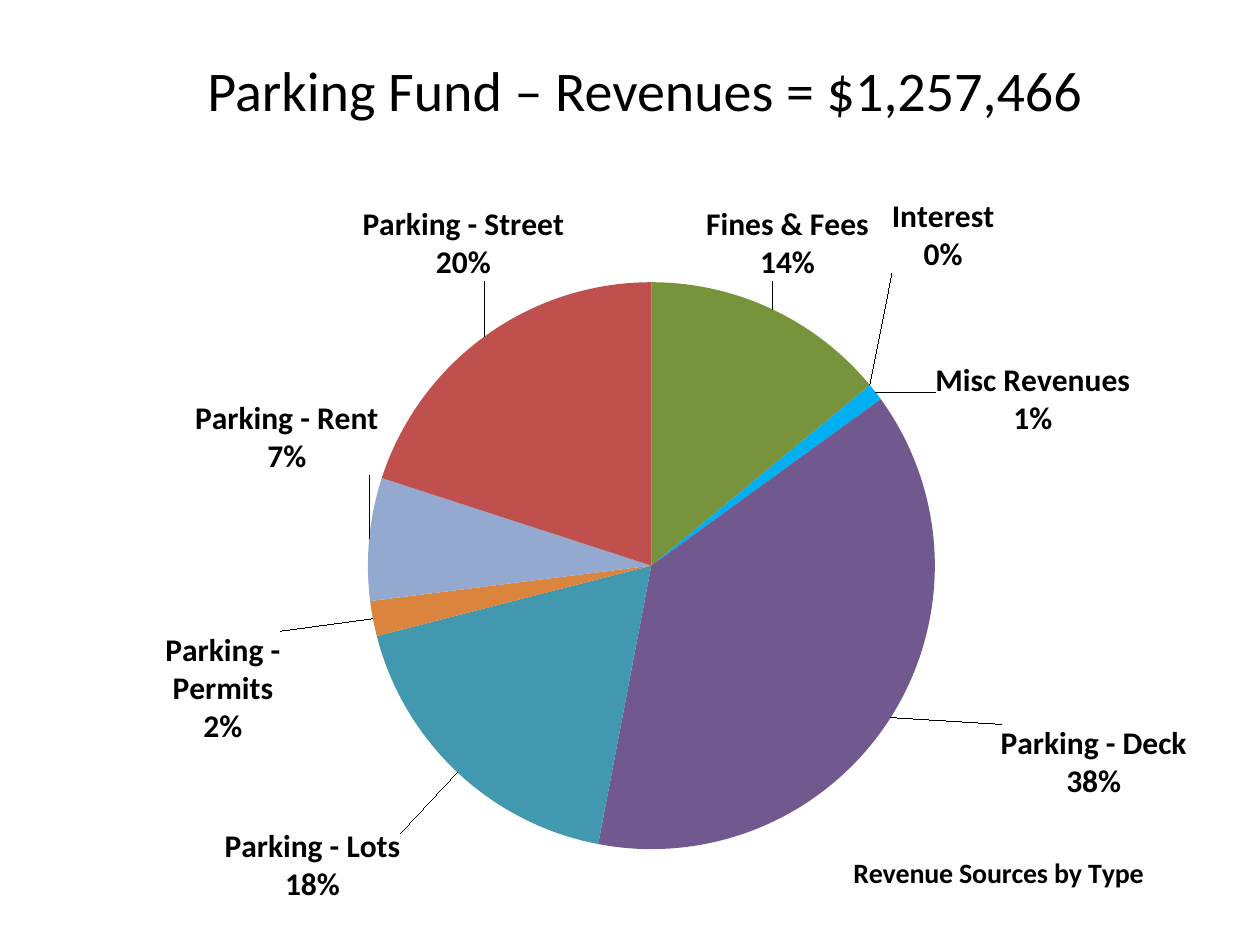
"""Build the parking fund revenue slide with its labelled pie chart."""
from dataclasses import dataclass
from math import cos, pi, sin

from pptx import Presentation
from pptx import util as u
from pptx.chart import data as chart_data
from pptx.dml.color import RGBColor
from pptx.enum import chart as charts, text
from pptx.oxml import parse_xml
from pptx.oxml.ns import nsdecls

SLIDE_WIDTH, SLIDE_HEIGHT = u.Inches(10), u.Inches(7.5)
CHART_WIDTH, CHART_HEIGHT = 8.67, 6.17
CENTRE_X, CENTRE_Y = 4.42 / CHART_WIDTH, 3.49 / CHART_HEIGHT
RADIUS, LABEL_GAP = 2.25, 0.06
FONT, INK = "Calibri", "000000"


@dataclass(frozen=True)
class Slice:
    """A revenue source and the label corner nearest the pie, as chart shares."""
    name: str
    percent: float
    color: str
    label_x: float
    label_y: float


SLICES = [
    Slice("Fines & Fees", 14, "77933C", 0.56, 0.2),
    Slice("Interest", 0.01, "E46C0A", 0.73, 0.19),
    Slice("Misc Revenues", 1, "00B0F0", 0.77, 0.4),
    Slice("Parking - Deck", 38, "71588F", 0.83, 0.77),
    Slice("Parking - Lots", 18, "4198AF", 0.28, 0.91),
    Slice("Parking - Permits", 2, "DB843D", 0.17, 0.65),
    Slice("Parking - Rent", 7, "93A9CF", 0.26, 0.45),
    Slice("Parking - Street", 20, "C0504D", 0.43, 0.2),
]
TOTAL = sum(part.percent for part in SLICES)


def rgb(color: str) -> RGBColor:
    """Turn a hex string into a colour."""
    return RGBColor.from_string(color)


def style_font(font, size: float, bold: bool = False, color: str = INK) -> None:
    """Set the typeface, size, weight and colour of a font."""
    font.name, font.size, font.bold = FONT, u.Pt(size), bold
    font.color.rgb = rgb(color)


def write(frame, words: str, align=text.PP_ALIGN.CENTER, **style) -> None:
    """Write one formatted paragraph into a text frame."""
    para = frame.paragraphs[0]
    para.alignment = align
    span = para.add_run()
    span.text = words
    style_font(span.font, **style)


def layout_xml(x: float, y: float, size: tuple = (), edges: bool = True) -> str:
    """Describe a manual chart layout in shares of the chart."""
    parts = ['<c:layoutTarget val="inner"/>'] if size else []
    if edges:
        parts += ['<c:xMode val="edge"/>', '<c:yMode val="edge"/>']
    parts += [f'<c:{tag} val="{value:.4f}"/>' for tag, value in zip("xywh", (x, y, *size))]
    return f'<c:layout {nsdecls("c")}><c:manualLayout>{"".join(parts)}</c:manualLayout></c:layout>'


def drop_layout(parent) -> None:
    """Remove the automatic layout of a chart part."""
    for layout in parent.xpath("./c:layout"):
        parent.remove(layout)


def label_offset(part: Slice, middle: float) -> tuple[float, float]:
    """Measure how far a label sits from its default place beside the pie."""
    angle, reach = 2 * pi * middle / TOTAL, RADIUS + LABEL_GAP
    default_x = CENTRE_X + reach * sin(angle) / CHART_WIDTH
    default_y = CENTRE_Y - reach * cos(angle) / CHART_HEIGHT
    return part.label_x - default_x, part.label_y - default_y


def labels_xml() -> str:
    """Describe all slice labels with their places and leader lines."""
    flags = {"LegendKey": 0, "Val": 0, "CatName": 1, "SerName": 0, "Percent": 1, "BubbleSize": 0}
    content = ('<c:dLblPos val="bestFit"/>'
               + "".join(f'<c:show{name} val="{on}"/>' for name, on in flags.items())
               + "<c:separator>\n</c:separator>")
    labels, start = [], 0
    for index, part in enumerate(SLICES):
        offset = label_offset(part, start + part.percent / 2)
        labels.append(f'<c:dLbl><c:idx val="{index}"/>{layout_xml(*offset, edges=False)}{content}</c:dLbl>')
        start += part.percent
    return (f'<c:dLbls {nsdecls("c")}>{"".join(labels)}<c:numFmt formatCode="0%" sourceLinked="0"/>'
            f'{content}<c:showLeaderLines val="1"/></c:dLbls>')


def add_heading(page) -> None:
    """Add the slide heading."""
    box = page.shapes.add_textbox(u.Inches(0.83), u.Inches(0.33), u.Inches(8.58), u.Inches(0.75))
    box.text_frame.word_wrap = True
    box.text_frame.vertical_anchor = text.MSO_ANCHOR.MIDDLE
    write(box.text_frame, "Parking Fund – Revenues = $1,257,466", size=32)


def add_pie(page) -> None:
    """Add the revenue pie with its title and labels."""
    data = chart_data.CategoryChartData()
    data.categories = [part.name for part in SLICES]
    data.add_series("Series 1", [part.percent for part in SLICES])
    chart = page.shapes.add_chart(
        charts.XL_CHART_TYPE.PIE, u.Inches(0.75), u.Inches(1),
        u.Inches(CHART_WIDTH), u.Inches(CHART_HEIGHT), data).chart
    chart.has_legend = False
    style_font(chart.font, 18, bold=True)

    write(chart.chart_title.text_frame, "Revenue Sources by Type", size=16, bold=True)
    title = chart.element.xpath(".//c:chart/c:title")[0]
    drop_layout(title)
    title.xpath("./c:tx")[0].addnext(parse_xml(layout_xml(0.69, 0.93)))

    area = chart.element.xpath(".//c:plotArea")[0]
    drop_layout(area)
    width, height = 2 * RADIUS / CHART_WIDTH, 2 * RADIUS / CHART_HEIGHT
    area.insert(0, parse_xml(layout_xml(CENTRE_X - width / 2, CENTRE_Y - height / 2, (width, height))))

    plot = chart.plots[0]
    plot.vary_by_categories = True
    for index, part in enumerate(SLICES):
        fill = plot.series[0].points[index].format.fill
        fill.solid()
        fill.fore_color.rgb = rgb(part.color)
    for old in area.xpath(".//c:dLbls"):
        old.getparent().remove(old)
    area.xpath(".//c:ser/c:cat")[0].addprevious(parse_xml(labels_xml()))


def main() -> None:
    """Build and save the deck."""
    deck = Presentation()
    deck.slide_width, deck.slide_height = SLIDE_WIDTH, SLIDE_HEIGHT
    page = deck.slides.add_slide(deck.slide_layouts[6])
    add_heading(page)
    add_pie(page)
    deck.save("out.pptx")


if __name__ == "__main__":
    main()
